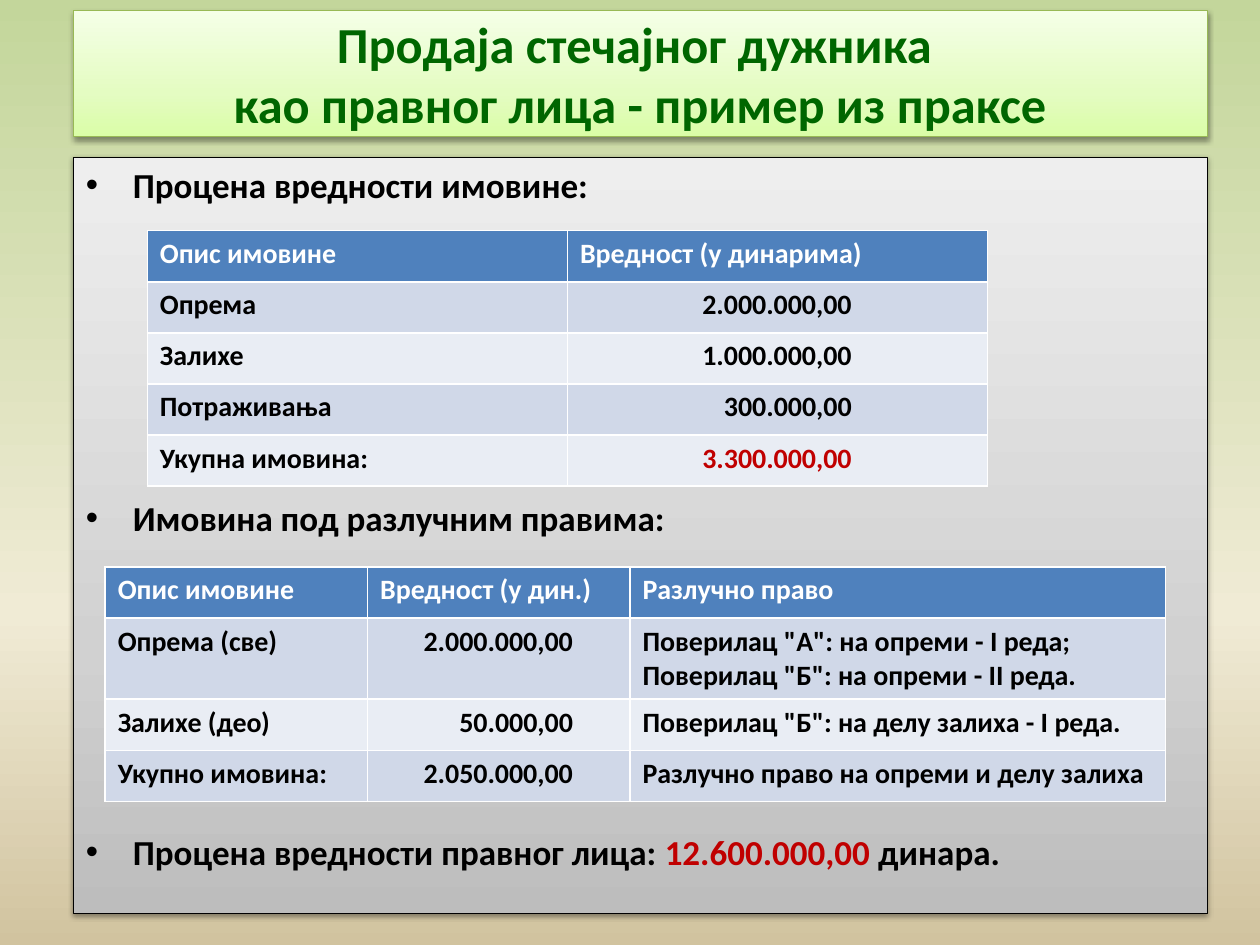
from dataclasses import dataclass

from lxml.etree import SubElement
from pptx import Presentation
from pptx.dml.color import RGBColor as RGB
from pptx.enum.shapes import MSO_SHAPE as Shape
from pptx.enum.text import MSO_ANCHOR as Anchor, PP_ALIGN as Align
from pptx.oxml.ns import qn
from pptx.util import Cm, Pt


@dataclass(frozen=True)
class Theme:
    font: str = "Calibri"
    title_size: float = 28.8
    body_size: float = 20
    table_size: float = 16
    green: str = "006600"
    black: str = "000000"
    white: str = "FFFFFF"
    red: str = "C00000"
    title_line: str = "98B955"
    header: str = "4F81BD"
    bands: tuple = ("D0D8E8", "E9EDF4")
    background: tuple = ((0, "C3D69B"), (65, "F0EBD5"), (100, "D1C39F"))
    title_fill: tuple = ((0, "DAFDA7"), (35, "E4FCC2"), (100, "F5FFE7"))
    panel_fill: tuple = ((0, "BDBDBD"), (35, "D1D1D1"), (100, "EEEEEE"))


THEME = Theme()
UP, DOWN = 90, 270

ASSETS = [
    ["Опис имовине", "Вредност (у динарима)"],
    ["Опрема", "2.000.000,00"],
    ["Залихе", "1.000.000,00"],
    ["Потраживања", "300.000,00"],
    ["Укупна имовина:", "3.300.000,00"],
]
SECURED_ASSETS = [
    ["Опис имовине", "Вредност (у дин.)", "Разлучно право"],
    ["Опрема (све)", "2.000.000,00",
     'Поверилац "А": на опреми - I реда;\nПоверилац "Б": на опреми - II реда.'],
    ["Залихе (део)", "50.000,00", 'Поверилац "Б": на делу залиха - I реда.'],
    ["Укупно имовина:", "2.050.000,00", "Разлучно право на опреми и делу залиха"],
]
POINTS = [
    [("Процена вредности имовине:", THEME.black)],
    [("Имовина под разлучним правима:", THEME.black)],
    [("Процена вредности правног лица: ", THEME.black),
     ("12.600.000,00 ", THEME.red), ("динара.", THEME.black)],
]


def add_run(p, text, size, color):
    r = p.add_run()
    r.text = text
    r.font.name, r.font.size, r.font.bold = THEME.font, Pt(size), True
    r.font.color.rgb = RGB.from_string(color)


def fill_gradient(fill, owner, stops, angle):
    """Give the fill inside the owner element any number of colour stops."""
    fill.gradient()
    fill.gradient_angle = angle
    stop_list = next(owner.iter(qn("a:gsLst")))
    for old in list(stop_list):
        stop_list.remove(old)
    for percent, color in stops:
        stop = SubElement(stop_list, qn("a:gs"), pos=str(percent * 1000))
        SubElement(stop, qn("a:srgbClr"), val=color)


def add_shadow(sp):
    sp.shadow.inherit = False
    effects = sp.element.spPr.find(qn("a:effectLst"))
    shadow = SubElement(effects, qn("a:outerShdw"), blurRad=str(Pt(3.1)),
                        dist=str(Pt(1.6)), dir="5400000", rotWithShape="0")
    color = SubElement(shadow, qn("a:srgbClr"), val=THEME.black)
    SubElement(color, qn("a:alpha"), val="38000")


def add_panel(s, box, stops, line):
    sp = s.shapes.add_shape(Shape.RECTANGLE, *box)
    fill_gradient(sp.fill, sp.element.spPr, stops, UP)
    sp.line.color.rgb, sp.line.width = RGB.from_string(line), Pt(0.75)
    add_shadow(sp)
    sp.text_frame.word_wrap = True
    return sp.text_frame


def add_title(s, box):
    tf = add_panel(s, box, THEME.title_fill, THEME.title_line)
    tf.vertical_anchor = Anchor.MIDDLE
    p = tf.paragraphs[0]
    p.alignment = Align.CENTER
    add_run(p, "Продаја стечајног дужника ", THEME.title_size, THEME.green)
    p.add_line_break()
    add_run(p, "као правног лица - пример из праксе", THEME.title_size, THEME.green)


def add_bullet(p):
    props = p._p.get_or_add_pPr()
    props.set("marL", str(Cm(0.95)))
    props.set("indent", str(-Cm(0.95)))
    SubElement(props, qn("a:buFont"), typeface="Arial")
    SubElement(props, qn("a:buChar"), char="•")


def add_table(s, left, top, widths, rows, number_margin, red_cell=None):
    """Table whose second column holds numbers, set right with a margin."""
    row_height = Cm(1.03)
    frame = s.shapes.add_table(len(rows), len(widths), left, top,
                               sum(widths), row_height * len(rows))
    table = frame.table
    for column, width in zip(table.columns, widths):
        column.width = width
    for i, row in enumerate(rows):
        table.rows[i].height = row_height
        for j, text in enumerate(row):
            cell = table.cell(i, j)
            cell.fill.solid()
            fill = THEME.bands[(i - 1) % 2] if i else THEME.header
            cell.fill.fore_color.rgb = RGB.from_string(fill)
            color = THEME.black if i else THEME.white
            if (i, j) == red_cell:
                color = THEME.red
            is_number = i > 0 and j == 1
            if is_number:
                cell.margin_right = number_margin
            tf = cell.text_frame
            for k, line in enumerate(text.split("\n")):
                p = tf.add_paragraph() if k else tf.paragraphs[0]
                p.alignment = Align.RIGHT if is_number else Align.LEFT
                add_run(p, line, THEME.table_size, color)


def add_valuation(s, box):
    """Panel with three points; a table fills each gap between them."""
    left, top = box[:2]
    tf = add_panel(s, box, THEME.panel_fill, THEME.black)
    tf.vertical_anchor = Anchor.TOP
    for i, point in enumerate(POINTS):
        p = tf.add_paragraph() if i else tf.paragraphs[0]
        p.alignment = Align.LEFT
        p.space_before = Pt(166.5 if i else 0)
        add_bullet(p)
        for text, color in point:
            add_run(p, text, THEME.body_size, color)
    add_table(s, left + Cm(1.49), top + Cm(1.48), [Cm(8.47)] * 2,
              ASSETS, Cm(2.74), red_cell=(4, 1))
    add_table(s, left + Cm(0.64), top + Cm(8.26), [Cm(5.29), Cm(5.29), Cm(10.8)],
              SECURED_ASSETS, Cm(1.15))


def main():
    prs = Presentation()
    prs.slide_width, prs.slide_height = Cm(25.4), Cm(19.05)
    s = prs.slides.add_slide(prs.slide_layouts[6])
    fill_gradient(s.background.fill, s.element, THEME.background, DOWN)
    left, width = Cm(1.48), Cm(22.86)
    add_title(s, (left, Cm(0.21), width, Cm(2.54)))
    add_valuation(s, (left, Cm(3.17), width, Cm(15.24)))
    prs.save("out.pptx")


if __name__ == "__main__":
    main()
